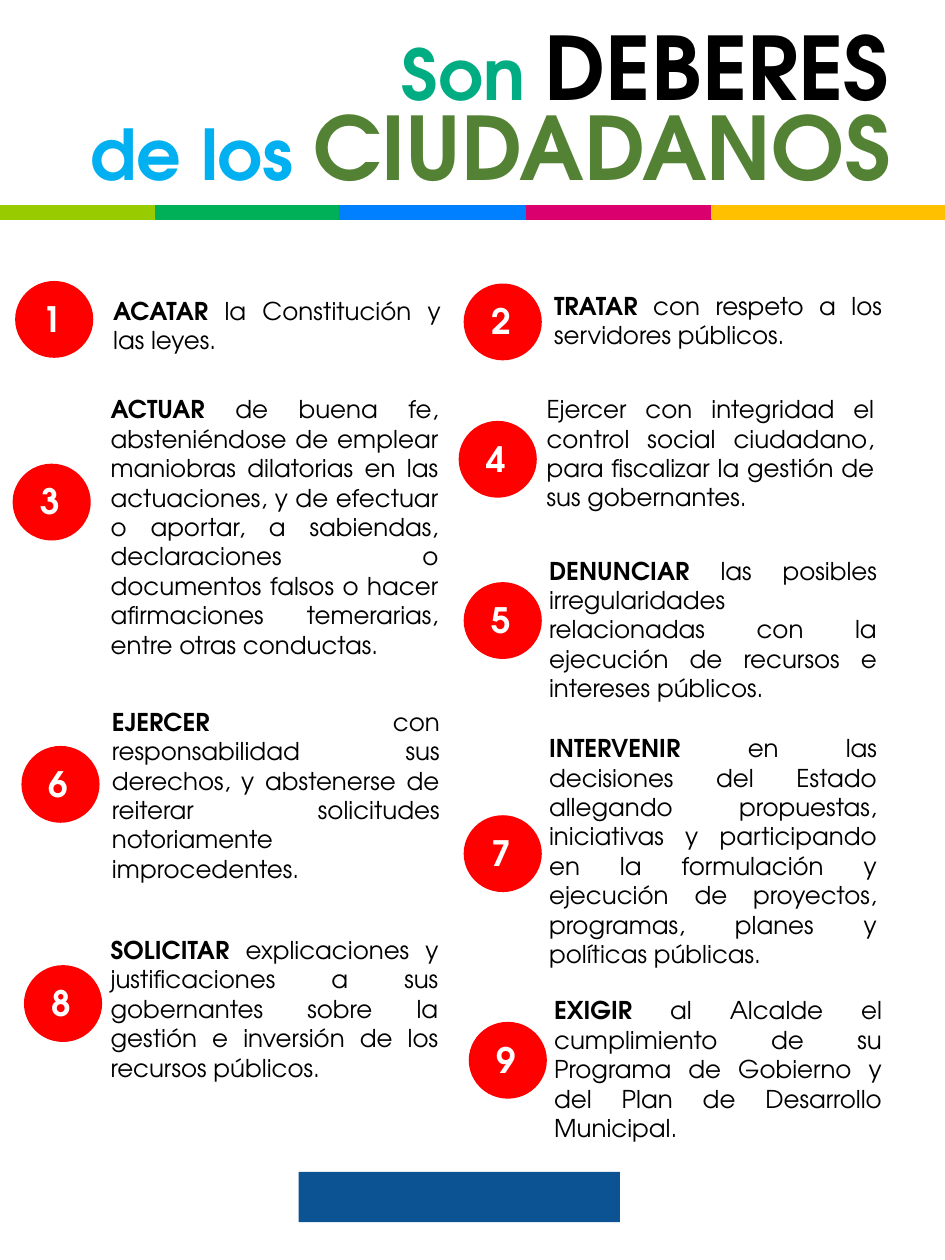
import pptx
import pptx.util
import pptx.dml.color
import pptx.enum.shapes
import pptx.enum.text

Inches = pptx.util.Inches
Pt = pptx.util.Pt
RGB = pptx.dml.color.RGBColor
ALIGN = pptx.enum.text.PP_ALIGN
SHAPE = pptx.enum.shapes.MSO_SHAPE

FONT = "TeX Gyre Adventor"
BLACK = RGB(0x00, 0x00, 0x00)
WHITE = RGB(0xFF, 0xFF, 0xFF)
RED = RGB(0xFF, 0x00, 0x00)
TEAL = RGB(0x00, 0xAC, 0x82)
SKY = RGB(0x00, 0xB0, 0xF0)
OLIVE = RGB(0x54, 0x82, 0x35)
NAVY = RGB(0x0C, 0x53, 0x93)
LIME = RGB(0x99, 0xCC, 0x00)
EMERALD = RGB(0x00, 0xB0, 0x58)
BLUE = RGB(0x00, 0x7F, 0xFE)
MAGENTA = RGB(0xDA, 0x00, 0x6D)
AMBER = RGB(0xFF, 0xC0, 0x00)

STRIPES = [
    (0, 2.27, LIME),
    (1.24, 2.27, EMERALD),
    (2.7, 2.27, BLUE),
    (4.18, 1.84, MAGENTA),
    (5.65, 1.85, AMBER),
]

LEFT_DUTIES = [
    ("1", 0.12, 0.03, 0.8, 0.1, 0.57, "ACATAR", " la Constitución y las leyes."),
    ("3", 0.1, 1.48, 0.78, 0.88, 2.22, "ACTUAR",
     " de buena fe, absteniéndose de emplear maniobras dilatorias en las "
     "actuaciones, y de efectuar o aportar, a sabiendas, declaraciones o "
     "documentos falsos o hacer afirmaciones temerarias, entre otras conductas."),
    ("6", 0.17, 3.72, 0.79, 3.36, 1.51, "EJERCER",
     " con responsabilidad sus derechos, y abstenerse de reiterar solicitudes "
     "notoriamente improcedentes."),
    ("8", 0.19, 5.46, 0.78, 5.17, 1.28, "SOLICITAR",
     " explicaciones y justificaciones a sus gobernantes sobre la gestión e "
     "inversión de los recursos públicos."),
]
RIGHT_DUTIES = [
    ("2", 0.08, 0.05, 0.7, 0.06, 0.57, "TRATAR",
     " con respeto a los servidores públicos."),
    ("4", 0.04, 1.14, 0.64, 0.88, 1.04, "",
     "Ejercer con integridad el control social ciudadano, para fiscalizar la "
     "gestión de sus gobernantes."),
    ("5", 0.08, 2.42, 0.66, 2.16, 1.28, "DENUNCIAR",
     " las posibles irregularidades relacionadas con la ejecución de recursos "
     "e intereses públicos."),
    ("7", 0.08, 4.27, 0.66, 3.57, 1.99, "INTERVENIR",
     " en las decisiones del Estado allegando propuestas, iniciativas y "
     "participando en la formulación y ejecución de proyectos, programas, "
     "planes y políticas públicas."),
    ("9", 0.12, 5.91, 0.7, 5.65, 1.28, "EXIGIR",
     " al Alcalde el cumplimiento de su Programa de Gobierno y del Plan de "
     "Desarrollo Municipal."),
]


def write(sp, runs, align=ALIGN.LEFT):
    tf = sp.text_frame
    tf.word_wrap = True
    tf.auto_size = pptx.enum.text.MSO_AUTO_SIZE.NONE
    tf.vertical_anchor = pptx.enum.text.MSO_ANCHOR.TOP
    p = tf.paragraphs[0]
    p.alignment = align
    p.space_before = Pt(0)
    p.line_spacing = 1.0
    for text, size, color, bold in runs:
        r = p.add_run()
        r.text = text
        r.font.name = FONT
        r.font.size = Pt(size)
        r.font.bold = bold
        r.font.color.rgb = color


def place(sp, x, y, w, h):
    sp.left, sp.top, sp.width, sp.height = (Inches(v) for v in (x, y, w, h))


def add_text(s, x, y, w, h, runs, align=ALIGN.LEFT):
    sp = s.shapes.add_textbox(Inches(x), Inches(y), Inches(w), Inches(h))
    write(sp, runs, align)


def add_solid(s, kind, x, y, w, h, color):
    sp = s.shapes.add_shape(kind, Inches(x), Inches(y), Inches(w), Inches(h))
    sp.shadow.inherit = False
    sp.fill.solid()
    sp.fill.fore_color.rgb = color
    sp.line.fill.background()
    return sp


def add_heading(s, x, y):
    title, subtitle = s.placeholders[0], s.placeholders[1]
    place(title, x + 2.47, y, 6.51, 1.16)
    write(title, [("Son ", 40, TEAL, True), ("DEBERES", 50, BLACK, True)])
    place(subtitle, x, y + 0.64, 6.81, 1.16)
    write(subtitle, [("de los ", 40, SKY, True), ("CIUDADANOS", 50, OLIVE, True)])


def add_stripes(s, x, y, h):
    for dx, w, color in STRIPES:
        sp = add_solid(s, SHAPE.RECTANGLE, x + dx, y, w, h, color)
        sp.line.color.rgb = color
        sp.line.width = Pt(1)


def add_duties(s, x, y, duties):
    for number, cx, cy, tx, ty, h, lead, rest in duties:
        add_solid(s, SHAPE.OVAL, x + cx, y + cy, 0.62, 0.61, RED)
        add_text(s, x + cx + 0.12, y + cy + 0.08, 1.18, 0.44,
                 [(number, 20, WHITE, True)])
        runs = [(lead, 14, BLACK, True)] if lead else []
        runs.append((rest, 14, BLACK, False))
        add_text(s, x + tx, y + ty, 2.8, h, runs, ALIGN.JUSTIFY)


def add_footer(s, x, y, w, h):
    add_solid(s, SHAPE.RECTANGLE, x, y, w, h, NAVY)


def main():
    prs = pptx.Presentation()
    prs.slide_width, prs.slide_height = Inches(7.5), Inches(10)
    s = prs.slides.add_slide(prs.slide_layouts[0])
    add_duties(s, 0, 2.2, LEFT_DUTIES)
    add_duties(s, 3.6, 2.2, RIGHT_DUTIES)
    add_heading(s, 0.62, 0.05)
    add_stripes(s, 0, 1.63, 0.11)
    add_footer(s, 2.37, 9.3, 2.55, 0.4)
    prs.save("out.pptx")


if __name__ == "__main__":
    main()
